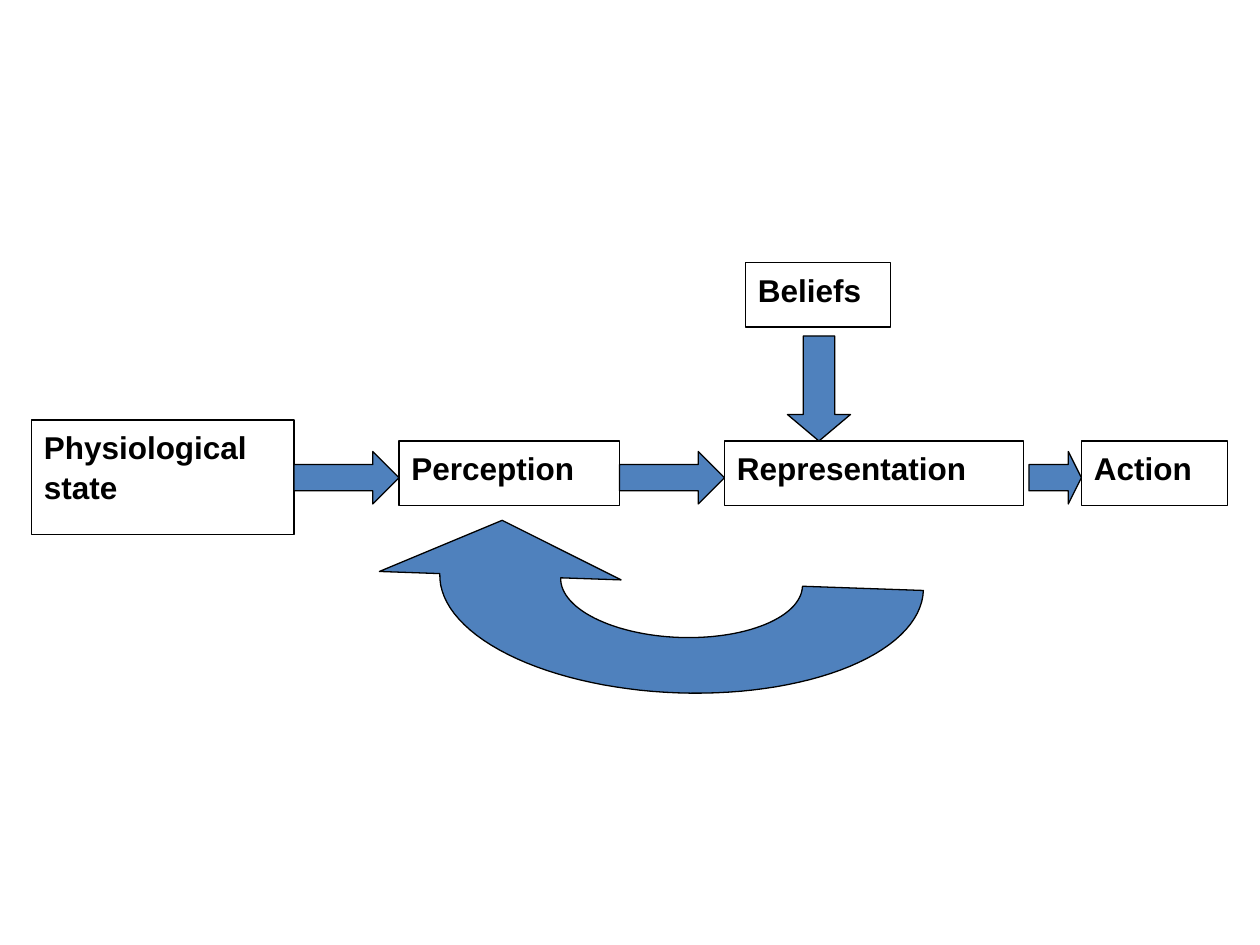
from math import cos, pi, radians, sin

from pptx import Presentation
from pptx.dml.color import RGBColor
from pptx.enum.shapes import MSO_SHAPE
from pptx.enum.text import MSO_ANCHOR, PP_ALIGN
from pptx.util import Inches, Pt

RECTANGLE = MSO_SHAPE.RECTANGLE
RIGHT_ARROW = MSO_SHAPE.RIGHT_ARROW
DOWN_ARROW = MSO_SHAPE.DOWN_ARROW
TOP = MSO_ANCHOR.TOP
LEFT = PP_ALIGN.LEFT

BLANK_LAYOUT = 6
COLUMNS, ROWS = 120, 90


def color(value):
    return RGBColor.from_string(value)


class Diagram:
    """Style and current slide; lengths are grid columns and rows."""

    font = "Arial"
    text_size = 18
    ink = "000000"
    arrow_fill = "4F81BD"
    line_width = 0.75

    def __init__(self, deck):
        self.column = deck.slide_width / COLUMNS
        self.row = deck.slide_height / ROWS
        self.page = deck.slides.add_slide(deck.slide_layouts[BLANK_LAYOUT])

    def point(self, column, row):
        return round(column * self.column), round(row * self.row)

    def outline(self, shape):
        shape.shadow.inherit = False
        shape.line.color.rgb = color(self.ink)
        shape.line.width = Pt(self.line_width)

    def paint(self, shape):
        self.outline(shape)
        shape.fill.solid()
        shape.fill.fore_color.rgb = color(self.arrow_fill)

    def add_shape(self, kind, left, top, width, height):
        return self.page.shapes.add_shape(
            kind, *self.point(left, top), *self.point(width, height))

    def box(self, text, left, top, width, height=6.15):
        box = self.add_shape(RECTANGLE, left, top, width, height)
        self.outline(box)
        box.fill.background()
        frame = box.text_frame
        frame.word_wrap = True
        frame.vertical_anchor = TOP
        para = frame.paragraphs[0]
        para.alignment = LEFT
        para.line_spacing = 1.05
        span = para.add_run()
        span.text = text
        span.font.name = self.font
        span.font.size = Pt(self.text_size)
        span.font.bold = True
        span.font.color.rgb = color(self.ink)

    def arrow(self, kind, left, top, width, height, head=0.5):
        arrow = self.add_shape(kind, left, top, width, height)
        arrow.adjustments[0] = 0.5
        arrow.adjustments[1] = head
        self.paint(arrow)

    def return_arrow(self, center, unit, tilt, steps=60):
        """Half ring between 2 and 4 units from the center, headed on the left."""
        def half_ellipse(radius):
            angles = [pi * step / steps for step in range(steps + 1)]
            return [(radius * cos(angle), radius * sin(angle)) for angle in angles]

        head = [(-5, 0), (-3, -2), (-1, 0)]
        ring = half_ellipse(4) + head + half_ellipse(2)[::-1]
        turn = radians(tilt)
        corners = []
        for across, down in ring:
            x, y = across * unit[0], down * unit[1]
            corners.append(self.point(
                center[0] + x * cos(turn) - y * sin(turn),
                center[1] + x * sin(turn) + y * cos(turn)))
        builder = self.page.shapes.build_freeform(*corners[0])
        builder.add_line_segments(corners[1:], close=True)
        self.paint(builder.convert_to_shape())


def main():
    deck = Presentation()
    deck.slide_width, deck.slide_height = Inches(10), Inches(7.5)
    diagram = Diagram(deck)

    diagram.box("Physiological state", 3, 40, 25, 10.9)
    diagram.box("Perception", 38, 42, 21)
    diagram.box("Representation", 69, 42, 28.5)
    diagram.box("Action", 103, 42, 13.9)
    diagram.box("Beliefs", 71, 25, 13.8)

    for left, width, head in ((28, 10, 0.5), (59, 10, 0.5), (98, 5, 0.25)):
        diagram.arrow(RIGHT_ARROW, left, 43, width, 5, head)
    diagram.arrow(DOWN_ARROW, 75, 32, 6, 10, 0.42)
    diagram.return_arrow(center=(64.92, 55.44), unit=(5.76, 2.64), tilt=2)

    deck.save("out.pptx")


if __name__ == "__main__":
    main()
